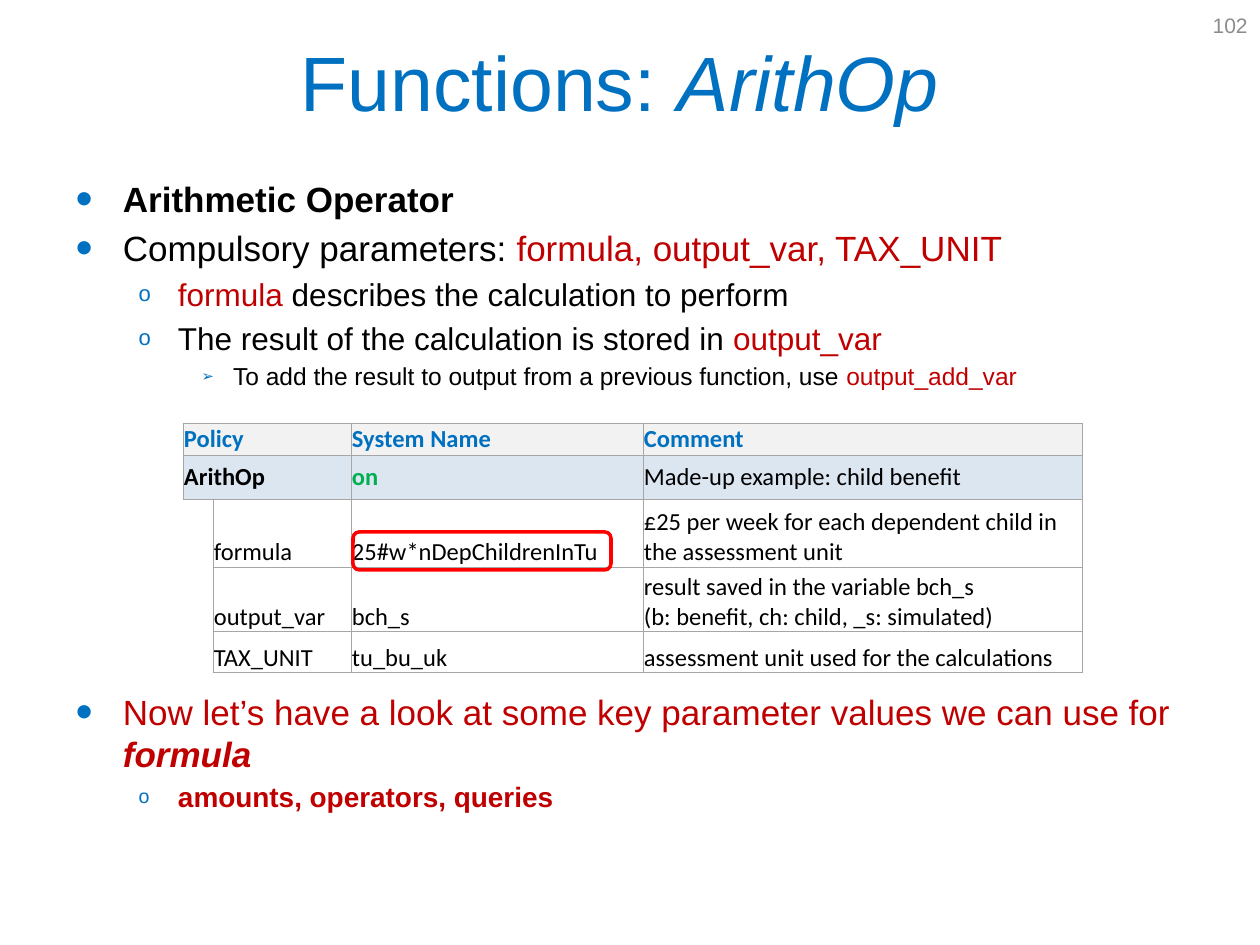
"""Build the slide that explains the ArithOp function."""
import lxml.etree
import pptx
import pptx.dml.color
import pptx.enum.shapes
import pptx.enum.text
import pptx.oxml.ns
import pptx.util

SCALE = 914400 / 126
BLUE, RED, BLACK, GREEN = "0070C0", "C00000", "000000", "00B050"
WHITE, PALE, SKY, EDGE = "FFFFFF", "F2F2F2", "DCE6F1", "A6A6A6"
BULLETS = [("•", 140), ("o", 70), ("➢", 60)]
ANCHOR = pptx.enum.text.MSO_ANCHOR
ALIGN = pptx.enum.text.PP_ALIGN


def px(num):
    return pptx.util.Emu(round(num * SCALE))


def color(code):
    return pptx.dml.color.RGBColor.from_string(code)


def node(base, tag, **attrs):
    return lxml.etree.SubElement(base, pptx.oxml.ns.qn(tag), **attrs)


def write(para, text, size=14, face="Arial", tint=BLACK, bold=False, slant=False):
    for num, part in enumerate(text.split("\n")):
        if num:
            para.add_line_break()
        run = para.add_run()
        run.text = part
        font = run.font
        font.size, font.name = pptx.util.Pt(size), face
        font.bold, font.italic = bold, slant
        font.color.rgb = color(tint)


class Deck:
    def __init__(self):
        self.show = pptx.Presentation()
        self.show.slide_width, self.show.slide_height = px(1260), px(945)
        self.slide = self.show.slides.add_slide(self.show.slide_layouts[1])

    def place(self, item, left, top, width, height):
        item.left, item.top = px(left), px(top)
        item.width, item.height = px(width), px(height)

    def title(self, parts, *box):
        item = self.slide.shapes.title
        self.place(item, *box)
        frame = item.text_frame
        frame.vertical_anchor = ANCHOR.MIDDLE
        para = frame.paragraphs[0]
        para.alignment = ALIGN.CENTER
        for text, style in parts:
            write(para, text, size=44, tint=BLUE, **style)

    def bullet(self, para, level):
        mark, size = BULLETS[level]
        para.level = level
        props = para._p.get_or_add_pPr()
        node(node(props, "a:buClr"), "a:srgbClr", val=BLUE)
        node(props, "a:buSzPct", val=str(size * 1000))
        node(props, "a:buFont", typeface="Arial")
        node(props, "a:buChar", char=mark)

    def body(self, items, *box):
        item = self.slide.placeholders[1]
        self.place(item, *box)
        frame = item.text_frame
        frame.auto_size = pptx.enum.text.MSO_AUTO_SIZE.NONE
        for num, (level, size, gap, parts) in enumerate(items):
            para = frame.add_paragraph() if num else frame.paragraphs[0]
            self.bullet(para, level)
            if gap is not None:
                para.space_before = pptx.util.Pt(gap)
            for text, style in parts:
                write(para, text, size=size, **style)

    def label(self, text, *box, **style):
        frame = self.slide.shapes.add_textbox(*map(px, box)).text_frame
        frame.word_wrap = True
        frame.vertical_anchor = ANCHOR.MIDDLE
        frame.paragraphs[0].alignment = ALIGN.RIGHT
        write(frame.paragraphs[0], text, **style)

    def border(self, cell, sides):
        props = cell._tc.get_or_add_tcPr()
        for side in "LRTB":
            line = node(props, "a:ln" + side, w="6350")
            if side in sides:
                node(node(line, "a:solidFill"), "a:srgbClr", val=EDGE)
            else:
                node(line, "a:noFill")

    def cell(self, cell, text, fill, sides, anchor, **style):
        self.border(cell, sides)
        cell.fill.solid()
        cell.fill.fore_color.rgb = color(fill)
        cell.margin_left = cell.margin_right = cell.margin_top = px(1)
        cell.margin_bottom = 0
        cell.vertical_anchor = anchor
        write(cell.text_frame.paragraphs[0], text, face="Calibri", **style)

    def table(self, left, top, cols, rows, data):
        box = left, top, sum(cols), sum(rows)
        grid = self.slide.shapes.add_table(len(rows), len(cols), *map(px, box)).table
        grid.first_row = grid.horz_banding = False
        for col, width in zip(grid.columns, cols):
            col.width = px(width)
        for y, (line, height) in enumerate(zip(data, rows)):
            grid.rows[y].height = px(height)
            head = y < 2
            if head:
                grid.cell(y, 0).merge(grid.cell(y, 1))
            for x, (text, style) in enumerate(line):
                sides = "LRTB" if head or x else "RT" if y == 2 else "R"
                fill = (PALE, SKY)[y] if head else WHITE
                anchor = ANCHOR.MIDDLE if head else ANCHOR.BOTTOM
                self.cell(grid.cell(y, x), text, fill, sides, anchor, **style)

    def frame(self, *box, tint, width):
        kind = pptx.enum.shapes.MSO_SHAPE.ROUNDED_RECTANGLE
        item = self.slide.shapes.add_shape(kind, *map(px, box))
        item.shadow.inherit = False
        item.fill.background()
        item.line.color.rgb = color(tint)
        item.line.width = pptx.util.Pt(width)


def main():
    red, plain = {"tint": RED}, {}
    strong = {"bold": True}
    head = {"bold": True, "tint": BLUE}
    deck = Deck()
    deck.body([
        (0, 20, 0, [("Arithmetic Operator", strong)]),
        (0, 20, None, [("Compulsory parameters: ", plain),
                       ("formula, output_var, TAX_UNIT", red)]),
        (1, 18, None, [("formula", red), (" describes the calculation to perform", plain)]),
        (1, 18, None, [("The result of the calculation is stored in ", plain),
                       ("output_var", red)]),
        (2, 14, None, [("To add the result to output from a previous function, use ", plain),
                       ("output_add_var", red)]),
        (0, 20, 171, [("Now let’s have a look at some key parameter values we can use for ", red),
                      ("formula", {"tint": RED, "bold": True, "slant": True})]),
        (1, 16, None, [("amounts, operators, queries", {"tint": RED, "bold": True})]),
    ], 63, 171, 1134, 580)
    rows = [
        ("formula", "25#w*nDepChildrenInTu",
         "£25 per week for each dependent child in the assessment unit"),
        ("output_var", "bch_s",
         "result saved in the variable bch_s\n(b: benefit, ch: child, _s: simulated)"),
        ("TAX_UNIT", "tu_bu_uk", "assessment unit used for the calculations"),
    ]
    data = [
        [("Policy", head), ("", plain), ("System Name", head), ("Comment", head)],
        [("ArithOp", strong), ("", plain), ("on", {"bold": True, "tint": GREEN}),
         ("Made-up example: child benefit", plain)],
    ] + [[(text, plain) for text in ("", *row)] for row in rows]
    deck.table(183, 423, [30, 138, 292, 440], [32, 44, 68, 65, 41], data)
    deck.title([("Functions: ", plain), ("ArithOp", {"slant": True})], 53, 2, 1134, 158)
    deck.label("102", 966, 0, 294, 50, size=12, tint="8C8C8C")
    deck.frame(353, 532, 258, 38, tint="FF0000", width=2)
    deck.show.save("out.pptx")


if __name__ == "__main__":
    main()
